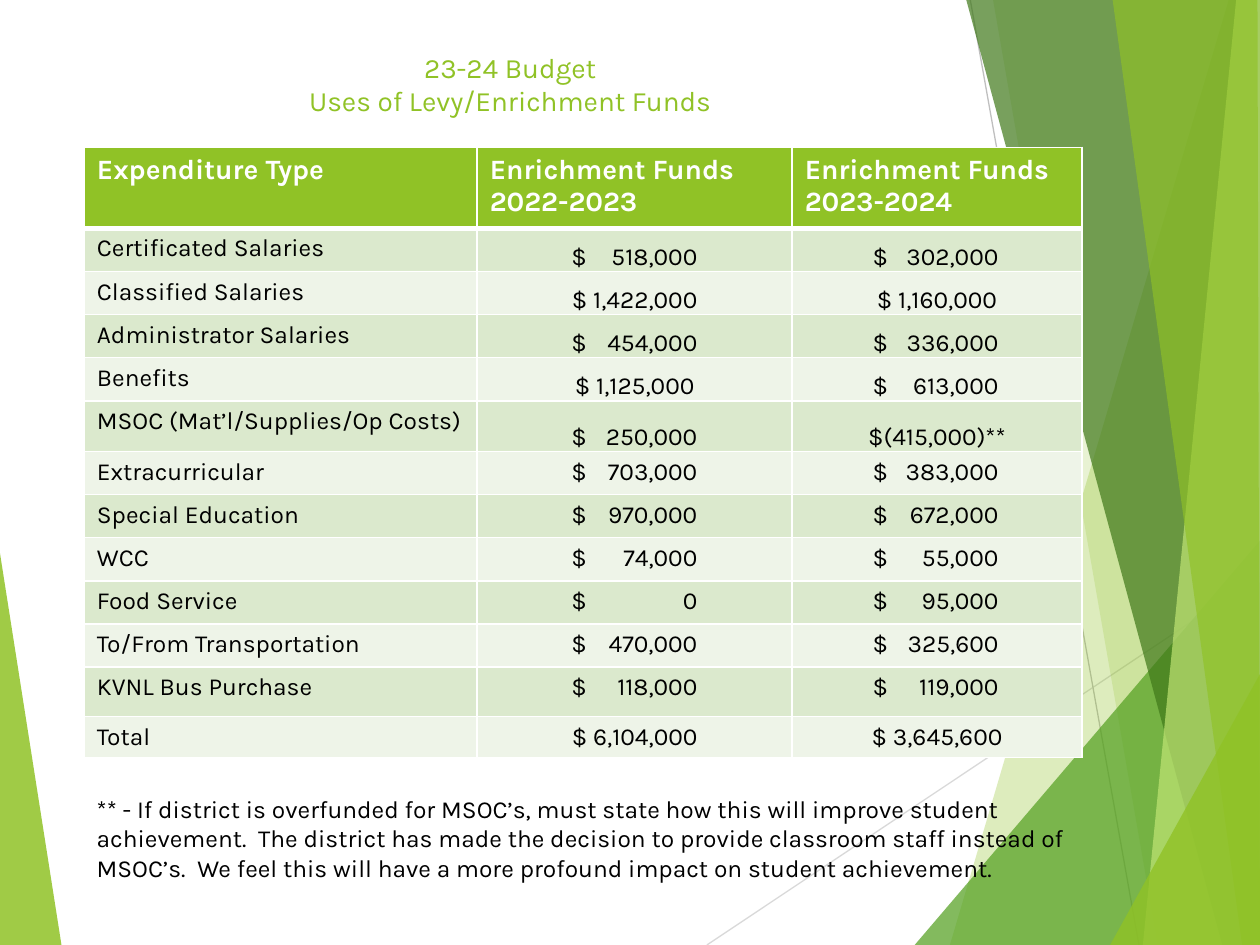
from lxml import etree
from pptx import Presentation
from pptx.dml.color import RGBColor
from pptx.enum import shapes, text
from pptx.oxml import ns
from pptx.util import Cm, Pt

FONT = "Karla"
GREEN, WHITE, BLACK = "90C226", "FFFFFF", "000000"
BANDS = ("DBE9CD", "EEF4E8")
W, H = 25.4, 19.05

# Facets from back to front: colour, opacity in percent, corners in cm
EDGE = [(0, 11.15), (1.24, H), (0, H)]
FACETS = [
    (GREEN, 30, [(24.77, 0), (19.15, H), (W, H), (W, 0)]),
    (GREEN, 20, [(20.02, 0), (23.34, H), (W, H), (W, 0)]),
    ("54A021", 72, [(18.44, H), (W, 10.9), (W, H)]),
    ("3F7819", 70, [(19.48, 0), (24.64, H), (W, H), (W, 0)]),
    ("C0E474", 70, [(24.92, 0), (23.04, H), (W, H), (W, 0)]),
    (GREEN, 65, [(22.43, 0), (25.04, H), (W, H), (25.35, 0)]),
    (GREEN, 80, [(22.38, H), (W, 13.59), (W, H)]),
]

# Budget table; a tab sets the amount flush right of its dollar sign
HEAD = ["Expenditure Type", "Enrichment Funds\n2022-2023",
        "Enrichment Funds\n2023-2024"]
BUDGET = [
    ("Certificated Salaries", "$\t518,000", "$\t302,000"),
    ("Classified Salaries", "$ 1,422,000", "$ 1,160,000"),
    ("Administrator Salaries", "$\t454,000", "$\t336,000"),
    ("Benefits", "$ 1,125,000", "$\t613,000"),
    ("MSOC (Mat’l/Supplies/Op Costs)", "$\t250,000", "$(415,000)**"),
    ("Extracurricular", "$\t703,000", "$\t383,000"),
    ("Special Education", "$\t970,000", "$\t672,000"),
    ("WCC", "$\t74,000", "$\t55,000"),
    ("Food Service", "$\t0", "$\t95,000"),
    ("To/From Transportation", "$\t470,000", "$\t325,600"),
    ("KVNL Bus Purchase", "$\t118,000", "$\t119,000"),
    ("Total", "$ 6,104,000", "$ 3,645,600"),
]
COLS = [7.92, 6.35, 5.84]
ROWS = [1.63] + [0.87] * 4 + [1.02] + [0.87] * 5 + [0.99, 0.81]
SIGN = [0, 1.9, 1.62]  # left edge of the dollar signs in each column
SPAN = 2.54            # from dollar sign to end of amount
LOW = 5                # the first rows sit at the bottom of their cells

NOTE = ("** - If district is overfunded for MSOC’s, must state how this will "
        "improve student achievement.  The district has made the decision to "
        "provide classroom staff instead of MSOC’s.  We feel this will have a "
        "more profound impact on student achievement.")


def rgb(code):
    return RGBColor.from_string(code)


def node(parent, tag, **attrs):
    item = etree.SubElement(parent, ns.qn(tag))
    for key, val in attrs.items():
        item.set(key, str(val))
    return item


def add_run(para, words, size, color, bold=False):
    run = para.add_run()
    run.text = words
    font = run.font
    font.name, font.size, font.bold = FONT, Pt(size), bold
    font.color.rgb = rgb(color)


def add_facet(slide, color, alpha, corners):
    pts = [(Cm(x), Cm(y)) for x, y in corners]
    form = slide.shapes.build_freeform(*pts[0])
    form.add_line_segments(pts[1:], close=True)
    shape = form.convert_to_shape()
    shape.shadow.inherit = False
    shape.fill.solid()
    shape.fill.fore_color.rgb = rgb(color)
    shape.line.fill.background()
    fill = shape.fill.fore_color._xFill
    node(fill[0], "a:alpha", val=alpha * 1000)


def add_line(slide, color, *ends):
    line = slide.shapes.add_connector(
        shapes.MSO_CONNECTOR.STRAIGHT, *[Cm(v) for v in ends])
    line.line.color.rgb = rgb(color)
    line.line.width = Pt(0.75)
    node(line._element.spPr, "a:effectLst")


def add_title(slide):
    title = slide.shapes.title
    title.left, title.top = Cm(1.47), Cm(0.84)
    title.width, title.height = Cm(17.63), Cm(1.7)
    frame = title.text_frame
    frame.vertical_anchor = text.MSO_ANCHOR.MIDDLE
    para = frame.paragraphs[0]
    para.alignment = text.PP_ALIGN.CENTER
    add_run(para, "23-24 Budget", 16, GREEN)
    para.add_line_break()
    add_run(para, "Uses of Levy/Enrichment Funds", 16, GREEN)


def paint(cell, color, base=1):
    """Fill a cell and give it white borders; base is the bottom width."""
    props = cell._tc.get_or_add_tcPr()
    for side, width in (("L", 1), ("R", 1), ("T", 1), ("B", base)):
        edge = node(props, f"a:ln{side}", w=Pt(width))
        node(node(edge, "a:solidFill"), "a:srgbClr", val=WHITE)
    cell.fill.solid()
    cell.fill.fore_color.rgb = rgb(color)


def fill_amount(cell, words, col, low):
    if low:
        cell.vertical_anchor = text.MSO_ANCHOR.BOTTOM
        cell.margin_left = cell.margin_right = cell.margin_top = Cm(0.03)
        cell.margin_bottom = 0
    para = cell.text_frame.paragraphs[0]
    if "\t" in words:
        para.alignment = text.PP_ALIGN.LEFT
        cell.margin_left = Cm(SIGN[col])
        tabs = node(para._p.get_or_add_pPr(), "a:tabLst")
        node(tabs, "a:tab", pos=Cm(SPAN), algn="r")
    else:
        para.alignment = text.PP_ALIGN.CENTER
    add_run(para, words, 14, BLACK)


def add_budget(slide):
    grid = slide.shapes.add_table(
        len(ROWS), len(COLS), Cm(1.7), Cm(2.97),
        Cm(sum(COLS)), Cm(sum(ROWS))).table
    for col, width in zip(grid.columns, COLS):
        col.width = Cm(width)
    for row, height in zip(grid.rows, ROWS):
        row.height = Cm(height)
    # Header row
    for c, words in enumerate(HEAD):
        cell = grid.cell(0, c)
        paint(cell, GREEN, 3)
        frame = cell.text_frame
        for i, part in enumerate(words.split("\n")):
            para = frame.add_paragraph() if i else frame.paragraphs[0]
            add_run(para, part, 16, WHITE, True)
    # Body rows
    for r, row in enumerate(BUDGET):
        for c, words in enumerate(row):
            cell = grid.cell(r + 1, c)
            paint(cell, BANDS[r % 2])
            if c:
                fill_amount(cell, words, c, r < LOW)
            else:
                add_run(cell.text_frame.paragraphs[0], words, 14, BLACK)


def add_note(slide):
    box = slide.shapes.add_textbox(Cm(1.7), Cm(15.88), Cm(20.11), Cm(2.06))
    box.text_frame.word_wrap = True
    add_run(box.text_frame.paragraphs[0], NOTE, 14, BLACK)


def main():
    deck = Presentation()
    deck.slide_width, deck.slide_height = Cm(W), Cm(H)
    slide = deck.slides.add_slide(deck.slide_layouts[5])
    # Backdrop
    add_facet(slide, GREEN, 85, EDGE)
    add_line(slide, "D9D9D9", 14.25, H, W, 11.61)
    add_line(slide, "BFBFBF", 19.56, 0, 22.96, H)
    for facet in FACETS:
        add_facet(slide, *facet)
    # Content
    add_title(slide)
    add_budget(slide)
    add_note(slide)
    deck.save("out.pptx")


if __name__ == "__main__":
    main()
